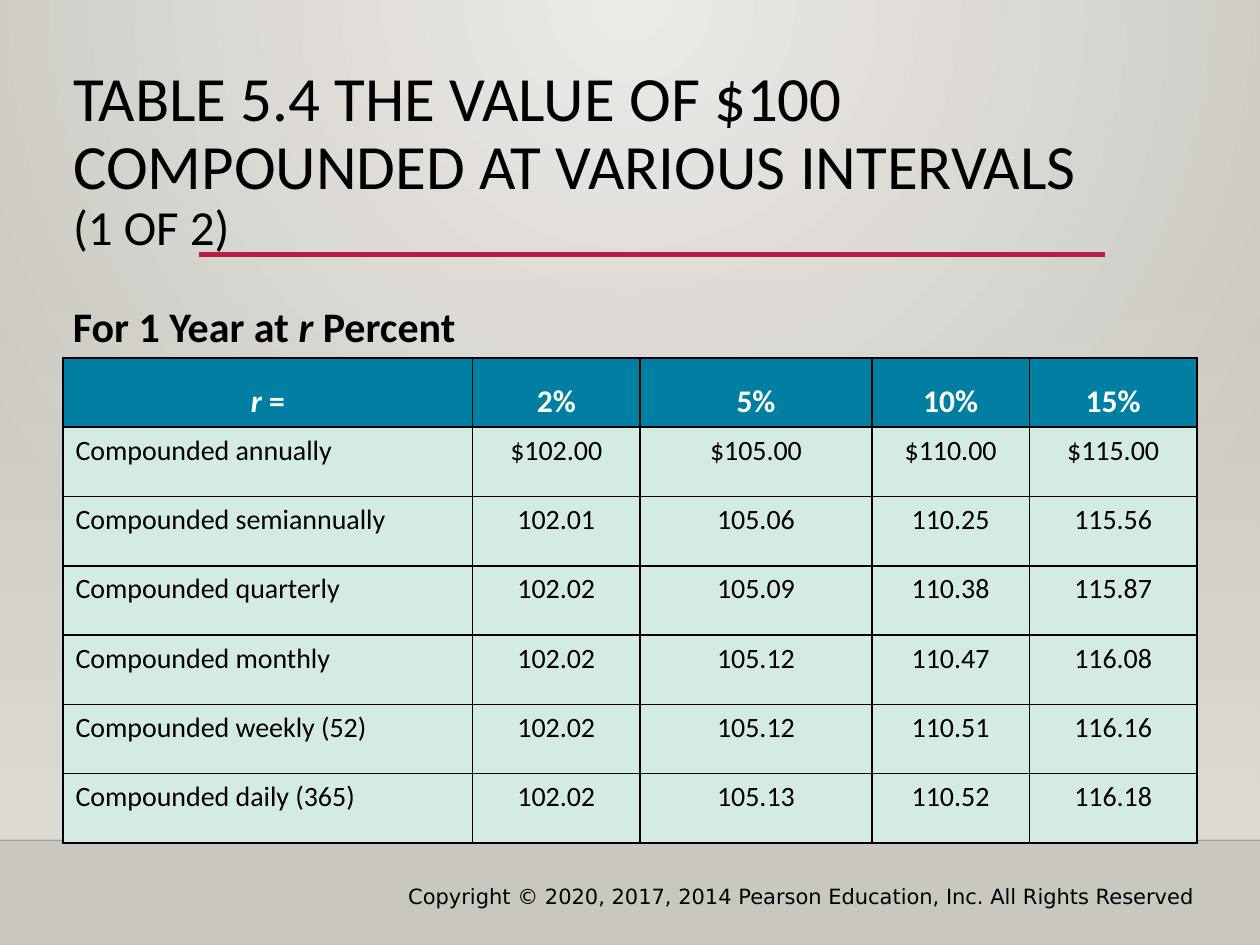
import lxml.etree
import pptx
import pptx.dml.color
import pptx.enum.shapes
import pptx.enum.text
import pptx.oxml
import pptx.oxml.ns
import pptx.util

Inches, Pt = pptx.util.Inches, pptx.util.Pt
RGBColor = pptx.dml.color.RGBColor
PP_ALIGN, MSO_ANCHOR = pptx.enum.text.PP_ALIGN, pptx.enum.text.MSO_ANCHOR
qn = pptx.oxml.ns.qn

BLACK = RGBColor(0x00, 0x00, 0x00)
WHITE = RGBColor(0xFF, 0xFF, 0xFF)
RED = RGBColor(0xB7, 0x1E, 0x42)
TEAL = RGBColor(0x00, 0x7F, 0xA3)
MINT = RGBColor(0xD4, 0xEA, 0xE4)
BG_LIGHT = RGBColor(0xEC, 0xEA, 0xE7)
BG_DARK = RGBColor(0xCA, 0xC7, 0xC1)
WALL = RGBColor(0xDF, 0xDB, 0xD5)

COLUMN_WIDTHS = [3.25, 1.33, 1.84, 1.25, 1.33]
ROW_HEIGHT = 0.55
HEADER = ["r =", "2%", "5%", "10%", "15%"]
ROWS = [
    ["Compounded annually", "$102.00", "$105.00", "$110.00", "$115.00"],
    ["Compounded semiannually", "102.01", "105.06", "110.25", "115.56"],
    ["Compounded quarterly", "102.02", "105.09", "110.38", "115.87"],
    ["Compounded monthly", "102.02", "105.12", "110.47", "116.08"],
    ["Compounded weekly (52)", "102.02", "105.12", "110.51", "116.16"],
    ["Compounded daily (365)", "102.02", "105.13", "110.52", "116.18"],
]


def add_run(p, text, size=16, font="Calibri", color=BLACK, bold=False, italic=False):
    r = p.add_run()
    r.text = text
    r.font.size = Pt(size)
    r.font.name = font
    r.font.color.rgb = color
    r.font.bold = bold
    r.font.italic = italic


def add_textbox(s, left, top, width, height):
    tf = s.shapes.add_textbox(Inches(left), Inches(top), Inches(width), Inches(height)).text_frame
    tf.word_wrap = True
    return tf.paragraphs[0]


def set_gradient(parent, stops, direction):
    """Replace the solid fill in parent by a gradient; stops are (position, colour, alpha) in percent."""
    stop_xml = "".join(
        f'<a:gs pos="{pos * 1000}"><a:srgbClr val="{color}">'
        f'<a:alpha val="{alpha * 1000}"/></a:srgbClr></a:gs>'
        for pos, color, alpha in stops)
    grad = pptx.oxml.parse_xml(
        f'<a:gradFill {pptx.oxml.ns.nsdecls("a")} rotWithShape="1">'
        f'<a:gsLst>{stop_xml}</a:gsLst>{direction}</a:gradFill>')
    parent.replace(parent.find(qn("a:solidFill")), grad)


def add_line(s, x1, x2, y, color, width, alpha=100):
    line = s.shapes.add_connector(pptx.enum.shapes.MSO_CONNECTOR.STRAIGHT,
                                  Inches(x1), Inches(y), Inches(x2), Inches(y))
    line.line.color.rgb = color
    line.line.width = Pt(width)
    spPr = line.element.spPr
    if alpha < 100:
        clr = spPr.find(".//" + qn("a:srgbClr"))
        lxml.etree.SubElement(clr, qn("a:alpha")).set("val", str(alpha * 1000))
    lxml.etree.SubElement(spPr, qn("a:effectLst"))


def add_backdrop(s):
    s.background.fill.solid()
    set_gradient(s.element.find(".//" + qn("p:bgPr")),
                 [(0, BG_LIGHT, 100), (100, BG_DARK, 100)],
                 '<a:path path="circle"><a:fillToRect l="43000" r="43000" b="100000"/></a:path>')
    sp = s.shapes.add_shape(pptx.enum.shapes.MSO_SHAPE.RECTANGLE,
                            0, Inches(2.2), Inches(10), Inches(4.46))
    sp.shadow.inherit = False
    sp.line.fill.background()
    sp.fill.solid()
    set_gradient(sp.element.spPr, [(0, WALL, 0), (100, WALL, 100)],
                 '<a:lin ang="5400000" scaled="0"/>')
    add_line(s, 0, 10, 6.67, BLACK, 1, alpha=20)


def add_title(s):
    title = s.shapes.title
    title.left, title.top = Inches(0.48), Inches(0.44)
    title.width, title.height = Inches(9), Inches(1.68)
    tf = title.text_frame
    tf.word_wrap = True
    tf.auto_size = pptx.enum.text.MSO_AUTO_SIZE.NONE
    tf.vertical_anchor = MSO_ANCHOR.MIDDLE
    p = tf.paragraphs[0]
    p.alignment = PP_ALIGN.LEFT
    p.line_spacing = 0.9
    add_run(p, "TABLE 5.4 THE VALUE OF $100 COMPOUNDED AT VARIOUS INTERVALS", size=36)
    p.add_line_break()
    add_run(p, "(1 OF 2)", size=28)


def set_borders(cell):
    tcPr = cell._tc.get_or_add_tcPr()
    for i, side in enumerate(["lnL", "lnR", "lnT", "lnB"]):
        tcPr.insert(i, pptx.oxml.parse_xml(
            f'<a:{side} {pptx.oxml.ns.nsdecls("a")} w="12700"><a:solidFill>'
            f'<a:srgbClr val="{BLACK}"/></a:solidFill></a:{side}>'))


def add_value_table(s):
    data = [HEADER] + ROWS
    table = s.shapes.add_table(len(data), len(HEADER), Inches(0.5), Inches(2.84),
                               Inches(9), Inches(ROW_HEIGHT * len(data))).table
    for col, width in zip(table.columns, COLUMN_WIDTHS):
        col.width = Inches(width)
    for i, values in enumerate(data):
        table.rows[i].height = Inches(ROW_HEIGHT)
        is_header = i == 0
        for j, text in enumerate(values):
            cell = table.cell(i, j)
            cell.fill.solid()
            cell.fill.fore_color.rgb = TEAL if is_header else MINT
            cell.vertical_anchor = MSO_ANCHOR.BOTTOM if is_header else MSO_ANCHOR.TOP
            set_borders(cell)
            p = cell.text_frame.paragraphs[0]
            p.alignment = PP_ALIGN.CENTER if is_header or j else PP_ALIGN.LEFT
            if not is_header:
                add_run(p, text)
                continue
            style = dict(size=18, color=WHITE, bold=True)
            if j == 0:  # the variable itself is italic
                add_run(p, text[0], italic=True, **style)
                text = text[1:]
            add_run(p, text, **style)


def main():
    prs = pptx.Presentation()
    prs.slide_width, prs.slide_height = Inches(10), Inches(7.5)
    s = prs.slides.add_slide(prs.slide_layouts[5])

    # Background, footer and title rule
    add_backdrop(s)
    p = add_textbox(s, 1.75, 6.96, 7.83, 0.3)
    p.alignment = PP_ALIGN.RIGHT
    add_run(p, "Copyright © 2020, 2017, 2014 Pearson Education, Inc. All Rights Reserved",
            size=12, font="DejaVu Sans")
    add_line(s, 1.58, 8.77, 2.02, RED, 2.5)

    # Title and table caption
    add_title(s)
    p = add_textbox(s, 0.48, 2.26, 3.93, 0.4)
    p.line_spacing = 1.2
    for text, italic in [("For 1 Year at ", False), ("r", True), (" Percent", False)]:
        add_run(p, text, size=24, bold=True, italic=italic)

    # Compounded values
    add_value_table(s)
    prs.save("out.pptx")


if __name__ == "__main__":
    main()
